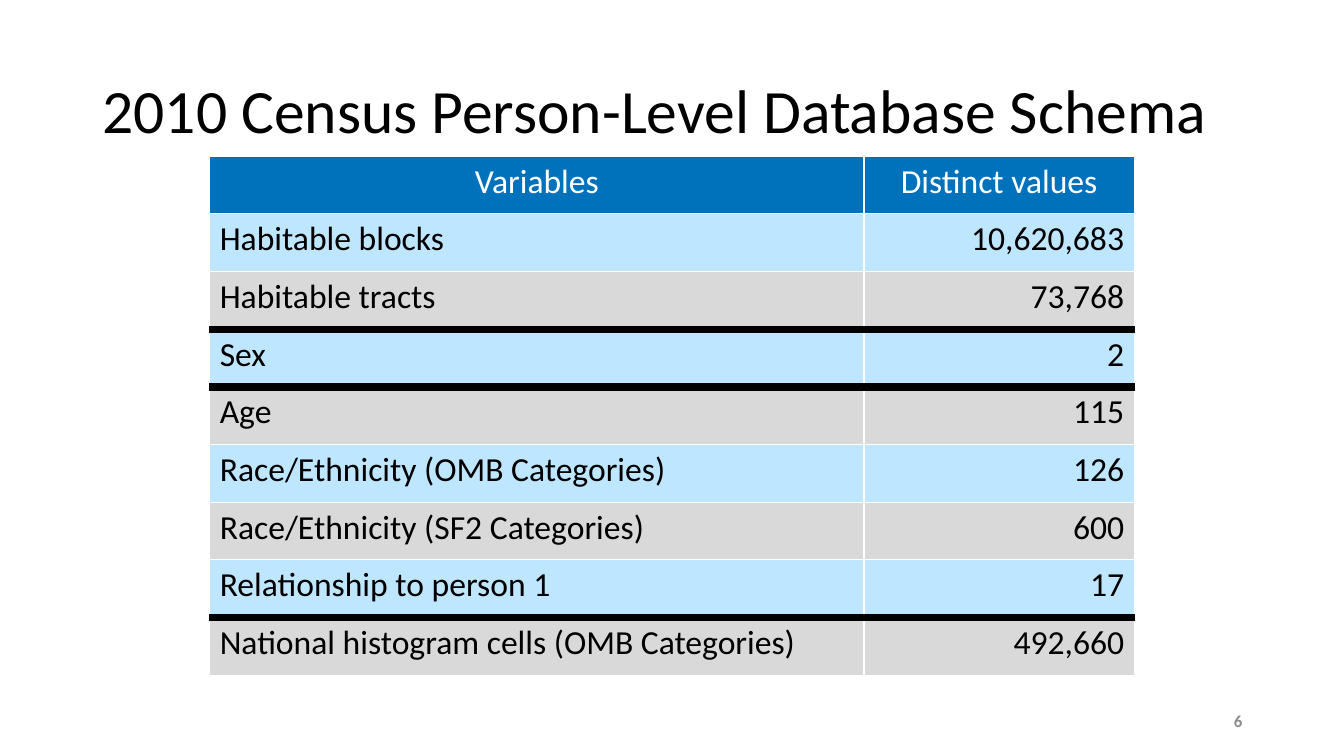
from pptx import Presentation
from pptx.dml.color import RGBColor
from pptx.enum.text import MSO_ANCHOR, PP_ALIGN
from pptx.oxml.ns import qn
from pptx.util import Inches, Pt
from lxml.etree import SubElement

TITLE = "2010 Census Person-Level Database Schema"
PAGE_NUMBER = "6"
HEADER = ("Variables", "Distinct values")
VARIABLES = [
    ("Habitable blocks", "10,620,683"),
    ("Habitable tracts", "73,768"),
    ("Sex", "2"),
    ("Age", "115"),
    ("Race/Ethnicity (OMB Categories)", "126"),
    ("Race/Ethnicity (SF2 Categories)", "600"),
    ("Relationship to person 1", "17"),
    ("National histogram cells (OMB Categories)", "492,660"),
]
HEAVY_RULES_BELOW = {2, 3, 7}
COLUMN_WIDTHS = (6.49, 2.68)
TABLE_LEFT, TABLE_TOP, TABLE_HEIGHT = 2.08, 1.55, 5.15
BLACK, WHITE, GRAY = "000000", "FFFFFF", "8C8C8C"
HEADER_FILL, BAND_FILLS = "0072BC", ("D9D9D9", "BFE6FF")


def color(value):
    return RGBColor.from_string(value)


def write(frame, text, size, text_color, align=PP_ALIGN.LEFT, bold=False):
    para = frame.paragraphs[0]
    para.alignment = align
    span = para.add_run()
    span.text = text
    span.font.name = "Calibri"
    span.font.size = Pt(size)
    span.font.bold = bold
    span.font.color.rgb = color(text_color)
    return para


def add_text(page, left, top, width, height, text, size, text_color, **style):
    box = page.shapes.add_textbox(Inches(left), Inches(top), Inches(width), Inches(height))
    box.text_frame.word_wrap = True
    box.text_frame.vertical_anchor = MSO_ANCHOR.MIDDLE
    return write(box.text_frame, text, size, text_color, **style)


def add_borders(cell, row):
    properties = cell._tc.get_or_add_tcPr()
    heavy_sides = {"T": row - 1 in HEAVY_RULES_BELOW, "B": row in HEAVY_RULES_BELOW}
    for side in "LRTB":
        heavy = heavy_sides.get(side, False)
        line = SubElement(properties, qn(f"a:ln{side}"), w=str(Pt(6 if heavy else 1)))
        fill = SubElement(line, qn("a:solidFill"))
        SubElement(fill, qn("a:srgbClr"), val=BLACK if heavy else WHITE)


def add_schema_table(page):
    rows = [HEADER, *VARIABLES]
    table = page.shapes.add_table(
        len(rows), len(HEADER), Inches(TABLE_LEFT), Inches(TABLE_TOP),
        Inches(sum(COLUMN_WIDTHS)), Inches(TABLE_HEIGHT),
    ).table
    for column, width in zip(table.columns, COLUMN_WIDTHS):
        column.width = Inches(width)
    for row, values in enumerate(rows):
        table.rows[row].height = Inches(TABLE_HEIGHT / len(rows))
        for column, text in enumerate(values):
            cell = table.cell(row, column)
            add_borders(cell, row)
            cell.fill.solid()
            cell.fill.fore_color.rgb = color(BAND_FILLS[row % 2] if row else HEADER_FILL)
            align = (PP_ALIGN.LEFT, PP_ALIGN.RIGHT)[column] if row else PP_ALIGN.CENTER
            write(cell.text_frame, text, 24, BLACK if row else WHITE, align)


def main():
    deck = Presentation()
    deck.slide_width, deck.slide_height = Inches(13.33), Inches(7.5)
    page = deck.slides.add_slide(deck.slide_layouts[6])
    title = add_text(page, 0.92, 0.4, 11.5, 1.45, TITLE, 44, BLACK)
    title.line_spacing = 0.9
    add_schema_table(page)
    add_text(page, 9.42, 6.95, 3, 0.4, PAGE_NUMBER, 12, GRAY, align=PP_ALIGN.RIGHT, bold=True)
    deck.save("out.pptx")


if __name__ == "__main__":
    main()
